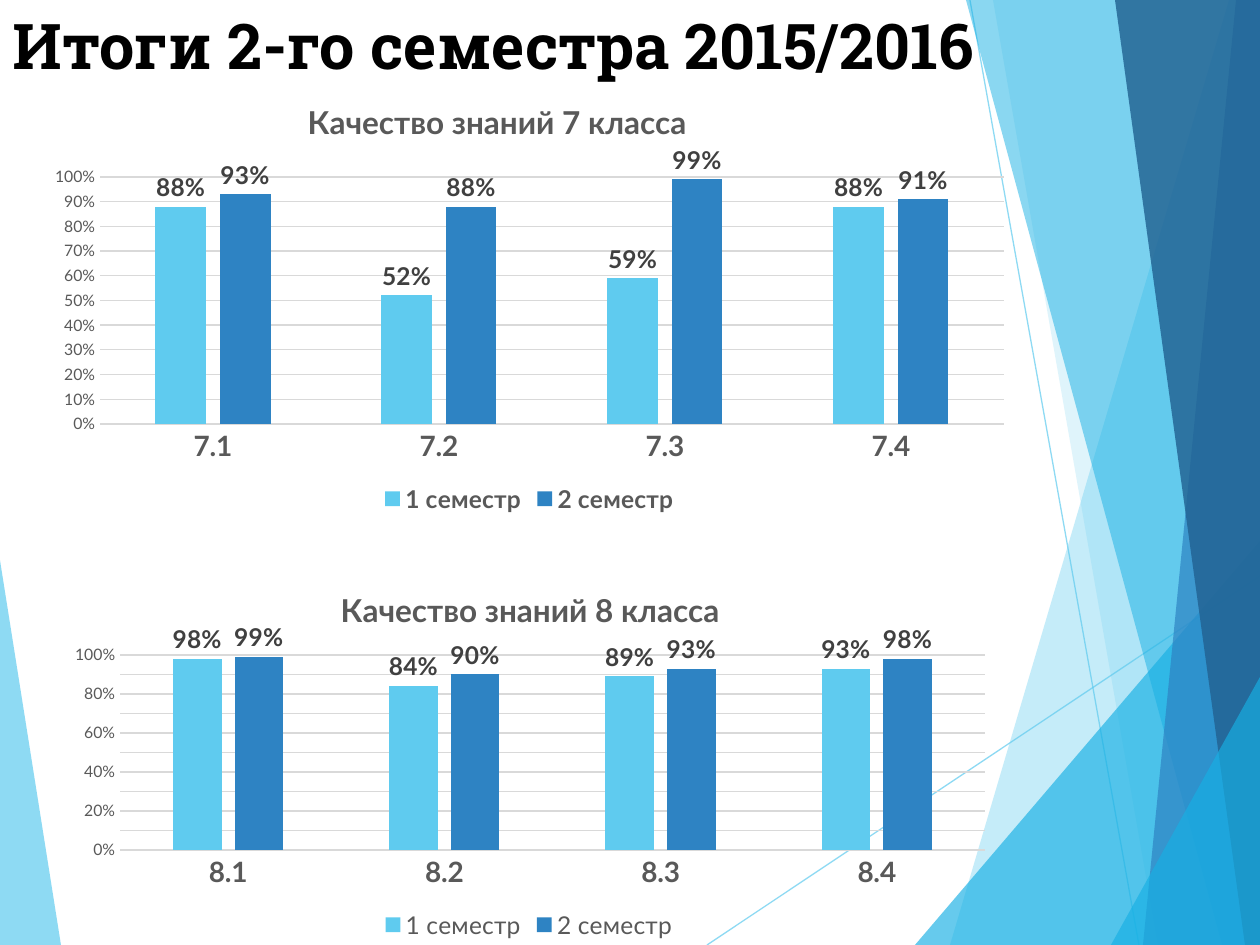
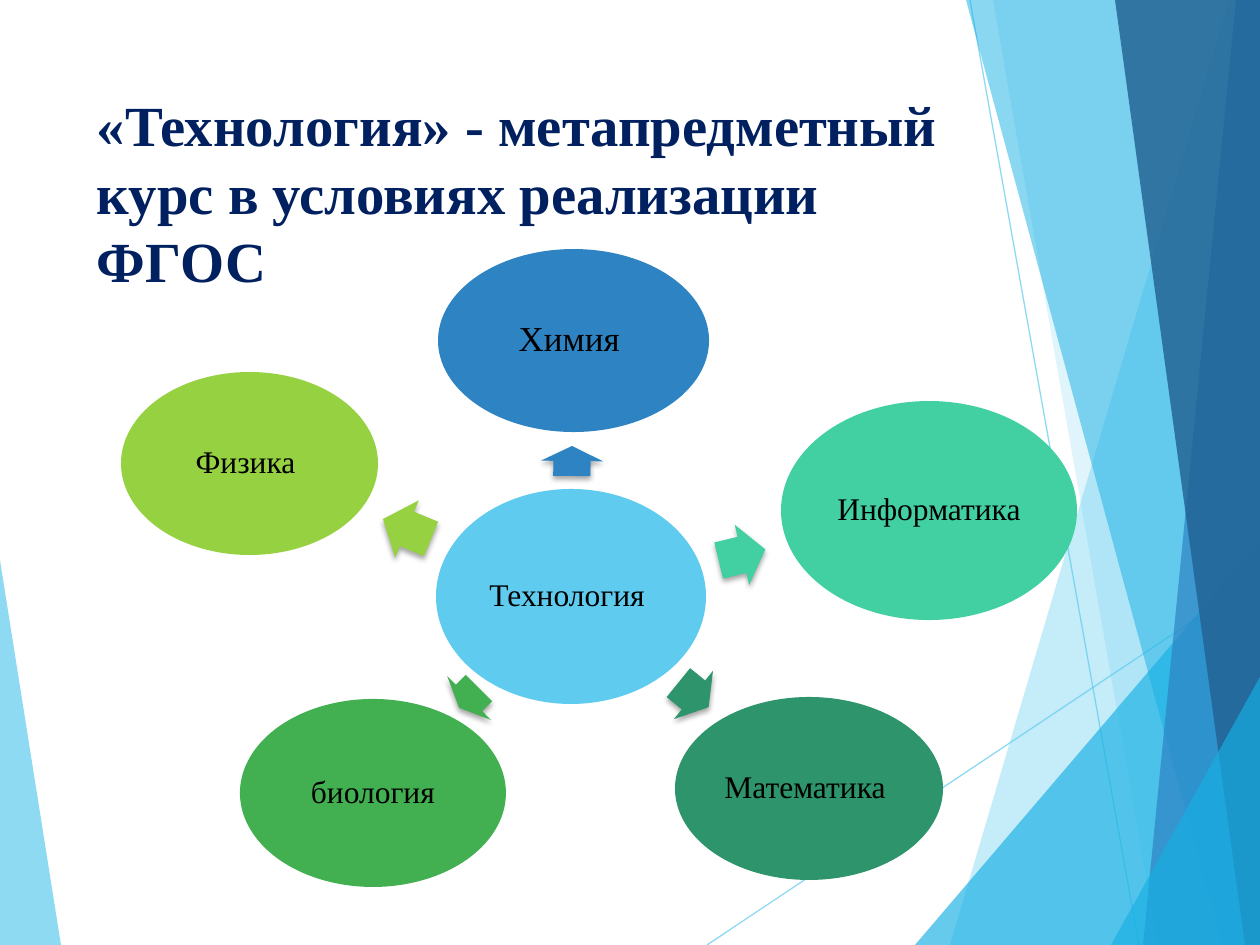
from dataclasses import dataclass

from lxml import etree
from pptx import Presentation
from pptx.chart.data import CategoryChartData
from pptx.dml.color import RGBColor
from pptx.enum.chart import XL_CHART_TYPE, XL_LABEL_POSITION, XL_LEGEND_POSITION, XL_TICK_MARK
from pptx.enum.shapes import MSO_CONNECTOR, MSO_SHAPE
from pptx.enum.text import MSO_ANCHOR, MSO_AUTO_SIZE, PP_ALIGN
from pptx.oxml.ns import qn
from pptx.util import Pt

COLUMNS = XL_CHART_TYPE.COLUMN_CLUSTERED
OUTSIDE = XL_LABEL_POSITION.OUTSIDE_END
LEGEND_BOTTOM = XL_LEGEND_POSITION.BOTTOM
NO_TICK = XL_TICK_MARK.NONE
STRAIGHT = MSO_CONNECTOR.STRAIGHT
OVAL, ARROW = MSO_SHAPE.OVAL, MSO_SHAPE.RIGHT_ARROW
TOP, MIDDLE, BOTTOM = MSO_ANCHOR.TOP, MSO_ANCHOR.MIDDLE, MSO_ANCHOR.BOTTOM
LEFT, CENTER = PP_ALIGN.LEFT, PP_ALIGN.CENTER

W, H = 1260, 945
SCALE = 914400 / 126


@dataclass(frozen=True)
class Theme:
    # Colours
    sky: str = "5FCBEF"
    cyan: str = "17B0E4"
    blue: str = "2E83C3"
    deep: str = "226292"
    navy: str = "002060"
    black: str = "000000"
    mint: str = "42D0A2"
    teal: str = "2E946B"
    green: str = "42B051"
    lime: str = "96D141"
    chart_text: str = "595959"
    label_text: str = "404040"
    grid: str = "D9D9D9"
    # Fonts
    slab: str = "Roboto Slab"
    serif: str = "Times New Roman"
    sans: str = "Lato"
    # Type sizes
    results_title: int = 36
    course_title: float = 32.4
    chart_title: int = 18
    category: int = 16
    value: int = 9
    label: int = 14
    subject: int = 18
    top_subject: int = 20


T = Theme()


def px(n):
    return round(n * SCALE)


def box_emu(box):
    return [px(n) for n in box]


def rgb(color):
    return RGBColor.from_string(color)


def style_font(font, size, color, name, bold=False):
    font.size, font.name, font.bold = Pt(size), name, bold
    font.color.rgb = rgb(color)


def write(tf, text, size, color, font, bold=False, align=LEFT, anchor=MIDDLE,
          spacing=1.0, margins=(13, 6, 13, 6)):
    tf.word_wrap = True
    tf.auto_size = MSO_AUTO_SIZE.NONE
    tf.vertical_anchor = anchor
    tf.margin_left, tf.margin_top, tf.margin_right, tf.margin_bottom = box_emu(margins)
    p = tf.paragraphs[0]
    p.alignment, p.line_spacing = align, spacing
    r = p.add_run()
    r.text = text
    style_font(r.font, size, color, font, bold)


def set_alpha(shape, percent):
    for clr in shape.element.iter(qn("a:srgbClr")):
        etree.SubElement(clr, qn("a:alpha"), val=str(percent * 1000))


def fill_plain(shape, color):
    shape.shadow.inherit = False
    shape.fill.solid()
    shape.fill.fore_color.rgb = rgb(color)
    shape.line.fill.background()


# Shared background: translucent wedges and two thin lines
CORNERS = [(W, H), (W, 0)]
LEFT_WEDGE = ([(0, 560), (61, H), (0, H)], T.sky, 70)
RIGHT_WEDGES = [
    ([(1229, 0), (950, H), *CORNERS], T.sky, 36),
    ([(993, 0), (1158, H), *CORNERS], T.sky, 20),
    ([(915, H), (W, 541), (W, H)], T.cyan, 66),
    ([(966, 0), (1222, H), *CORNERS], T.cyan, 50),
    ([(1236, 0), (1143, H), *CORNERS], T.blue, 70),
    ([(1115, 0), (1245, H), *CORNERS], T.deep, 82),
    ([(1111, H), (W, 677), (W, H)], T.cyan, 66),
]
THIN_LINES = [(707, H, W, 576), (970, 0, 1139, H)]


def add_wedge(s, points, color, alpha):
    builder = s.shapes.build_freeform(*points[0], scale=SCALE)
    builder.add_line_segments(points[1:], close=True)
    sp = builder.convert_to_shape()
    fill_plain(sp, color)
    set_alpha(sp, alpha)


def add_background(s):
    add_wedge(s, *LEFT_WEDGE)
    for ends in THIN_LINES:
        line = s.shapes.add_connector(STRAIGHT, *box_emu(ends))
        line.line.color.rgb = rgb(T.sky)
        line.line.width = Pt(0.75)
        set_alpha(line, 70)
        etree.SubElement(line.element.spPr, qn("a:effectLst"))
    for wedge in RIGHT_WEDGES:
        add_wedge(s, *wedge)


def add_titled_slide(prs, title, box, **fmt):
    s = prs.slides.add_slide(prs.slide_layouts[5])
    add_background(s)
    sp = s.shapes.title
    sp.element.getparent().append(sp.element)  # title above the background
    sp.left, sp.top, sp.width, sp.height = box_emu(box)
    write(sp.text_frame, title, bold=True, **fmt)
    return s


# Quality charts
def set_layout(parent, index, size, **places):
    """Place a chart part; places are px inside a chart of the given size."""
    for old in parent.findall(qn("c:layout")):
        parent.remove(old)
    layout = etree.Element(qn("c:layout"))
    manual = etree.SubElement(layout, qn("c:manualLayout"))
    if "w" in places:
        etree.SubElement(manual, qn("c:layoutTarget"), val="inner")
    for key in "xy":
        etree.SubElement(manual, qn(f"c:{key}Mode"), val="edge")
    for key, n in places.items():
        total = size[0] if key in "xw" else size[1]
        etree.SubElement(manual, qn(f"c:{key}"), val=f"{n / total:.4f}")
    parent.insert(index, layout)


def add_quality_chart(s, box, grade, terms, plot, title_at, bold_legend):
    data = CategoryChartData(number_format="0%")
    data.categories = [f"{grade}.{n}" for n in range(1, 5)]
    for n, values in enumerate(terms, 1):
        data.add_series(f"{n} семестр", [v / 100 for v in values])
    chart = s.shapes.add_chart(COLUMNS, *box_emu(box), data).chart
    style_font(chart.font, 10, T.black, T.sans)

    # Title and plot area
    size = box[2:]
    chart.has_title = True
    p = chart.chart_title.text_frame.paragraphs[0]
    r = p.add_run()
    r.text = f"Качество знаний {grade} класса"
    style_font(r.font, T.chart_title, T.chart_text, T.sans, True)
    set_layout(chart.chart_title.element, 1, size, **title_at)
    set_layout(chart.element.find(".//" + qn("c:plotArea")), 0, size, **plot)

    # Axes
    cat, val = chart.category_axis, chart.value_axis
    cat.major_tick_mark = val.major_tick_mark = NO_TICK
    style_font(cat.tick_labels.font, T.category, T.chart_text, T.sans, True)
    style_font(val.tick_labels.font, T.value, T.chart_text, T.sans)
    val.minimum_scale, val.maximum_scale, val.major_unit = 0, 1, 0.1
    val.tick_labels.number_format = "0%"
    val.tick_labels.number_format_is_linked = False
    val.format.line.fill.background()
    for line in (cat.format.line, val.major_gridlines.format.line):
        line.color.rgb = rgb(T.grid)
        line.width = Pt(0.75)

    # Columns and their labels
    bars = chart.plots[0]
    bars.gap_width, bars.overlap, bars.vary_by_categories = 219, -27, False
    for series, color in zip(bars.series, (T.sky, T.blue)):
        series.format.fill.solid()
        series.format.fill.fore_color.rgb = rgb(color)
        labels = series.data_labels
        labels.show_value, labels.position = True, OUTSIDE
        labels.number_format, labels.number_format_is_linked = "0%", False
        style_font(labels.font, T.label, T.label_text, T.sans, True)

    # Legend
    chart.has_legend = True
    chart.legend.position = LEGEND_BOTTOM
    chart.legend.include_in_layout = False
    style_font(chart.legend.font, T.label, T.chart_text, T.sans, bold_legend)


def build_results(prs):
    s = add_titled_slide(prs, "Итоги 2-го семестра 2015/2016", (0, 0, 1184, 93),
                         size=T.results_title, color=T.black, font=T.slab,
                         anchor=BOTTOM, margins=(13, 0, 13, 11))
    add_quality_chart(s, (35, 93, 989, 426), 7, [(88, 52, 59, 88), (93, 88, 99, 91)],
                      plot=dict(x=65, y=84, w=904, h=247),
                      title_at=dict(x=267, y=0), bold_legend=True)
    add_quality_chart(s, (55, 567, 948, 378), 8, [(98, 84, 89, 93), (99, 90, 93, 98)],
                      plot=dict(x=65, y=88, w=865, h=195),
                      title_at=dict(x=280, y=14), bold_legend=False)


# Subject map: a hub with an arrow to each related subject
HUB = ("Технология ", (436, 489, 270, 215), T.sky)
SUBJECTS = [  # text, oval box, colour, text size, arrow box, arrow rotation
    ("Химия ", (438, 249, 271, 183), T.blue, T.top_subject, (557, 430, 30, 62), 270.6),
    ("Информатика", (781, 401, 296, 219), T.mint, T.subject, (718, 524, 48, 62), 346.5),
    ("Математика ", (675, 697, 268, 183), T.teal, T.subject, (674, 664, 39, 62), 39),
    ("биология", (240, 699, 266, 188), T.green, T.subject, (455, 667, 28, 62), 135.1),
    ("Физика ", (121, 372, 257, 183), T.lime, T.subject, (381, 498, 52, 62), 202.4),
]


def add_subject(s, text, box, color, size=T.subject):
    sp = s.shapes.add_shape(OVAL, *box_emu(box))
    fill_plain(sp, color)
    write(sp.text_frame, text, size, T.black, T.serif, align=CENTER,
          spacing=0.9, margins=(4, 4, 4, 4))


def add_arrow(s, box, rotation, color):
    sp = s.shapes.add_shape(ARROW, *box_emu(box))
    sp.rotation = rotation
    sp.adjustments[0], sp.adjustments[1] = 0.6, 0.5
    fill_plain(sp, color)
    effects = sp.element.spPr.find(qn("a:effectLst"))
    shadow = etree.SubElement(effects, qn("a:outerShdw"), blurRad=str(Pt(3)),
                              dist=str(Pt(2)), dir="5400000", rotWithShape="0")
    clr = etree.SubElement(shadow, qn("a:srgbClr"), val=T.black)
    etree.SubElement(clr, qn("a:alpha"), val="35000")


def build_subject_map(prs):
    s = add_titled_slide(prs, "«Технология» - метапредметный курс в условиях реализации ФГОС",
                         (84, 84, 874, 181), size=T.course_title, color=T.navy,
                         font=T.serif, anchor=TOP)
    add_subject(s, *HUB)
    for text, box, color, size, arrow_box, rotation in SUBJECTS:
        add_arrow(s, arrow_box, rotation, color)
        add_subject(s, text, box, color, size)


def main():
    prs = Presentation()
    prs.slide_width, prs.slide_height = px(W), px(H)
    build_results(prs)
    build_subject_map(prs)
    prs.save("out.pptx")


if __name__ == "__main__":
    main()
